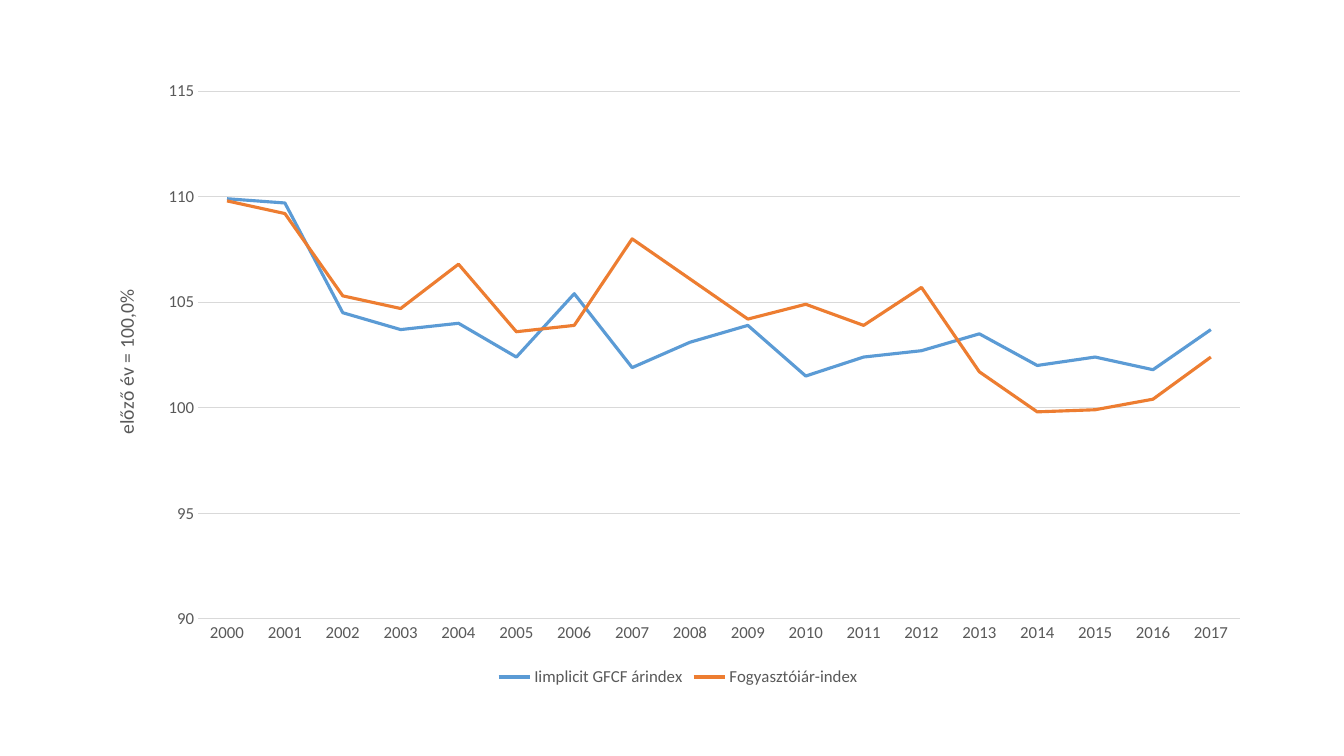
import pptx
import pptx.chart.data
import pptx.dml.color
import pptx.enum.chart
import pptx.oxml
import pptx.util

COLORS = {"text": "595959", "grid": "D9D9D9", "implicit": "5B9BD5", "consumer": "ED7D31"}
WIDTH, HEIGHT = pptx.util.Inches(13.33), pptx.util.Inches(7.5)
CHART_BOX = (0.069, 0.091, 0.871, 0.823)
PLOT_SHARE = {"x": 0.09, "y": 0.036, "w": 0.89, "h": 0.848}

YEARS = [str(year) for year in range(2000, 2018)]
PRICE_INDICES = [
    ("Iimplicit GFCF árindex", "implicit",
     [109.9, 109.7, 104.5, 103.7, 104, 102.4, 105.4, 101.9, 103.1,
      103.9, 101.5, 102.4, 102.7, 103.5, 102, 102.4, 101.8, 103.7]),
    ("Fogyasztóiár-index", "consumer",
     [109.8, 109.2, 105.3, 104.7, 106.8, 103.6, 103.9, 108, 106.1,
      104.2, 104.9, 103.9, 105.7, 101.7, 99.8, 99.9, 100.4, 102.4]),
]


def rgb(name):
    return pptx.dml.color.RGBColor.from_string(COLORS[name])


def format_font(font, size=12, color="text", bold=False):
    font.name = "Calibri"
    font.size = pptx.util.Pt(size)
    font.bold = bold
    font.color.rgb = rgb(color)


def add_text(frame, text, **style):
    run = frame.paragraphs[0].add_run()
    run.text = text
    format_font(run.font, **style)


def format_line(line, color, width):
    line.color.rgb = rgb(color)
    line.width = pptx.util.Pt(width)


def place_plot(chart, share):
    plot_area = chart._chartSpace.chart.plotArea
    for old_layout in plot_area.xpath("c:layout"):
        plot_area.remove(old_layout)
    modes = "".join(f'<c:{axis}Mode val="edge"/>' for axis in "xy")
    sizes = "".join(f'<c:{key} val="{value}"/>' for key, value in share.items())
    plot_area.insert(0, pptx.oxml.parse_xml(
        '<c:layout xmlns:c="http://schemas.openxmlformats.org/drawingml/2006/chart">'
        f'<c:manualLayout><c:layoutTarget val="inner"/>{modes}{sizes}'
        '</c:manualLayout></c:layout>'))


def format_axes(chart):
    years, index = chart.category_axis, chart.value_axis
    for axis in (years, index):
        axis.major_tick_mark = pptx.enum.chart.XL_TICK_MARK.NONE
        axis.minor_tick_mark = pptx.enum.chart.XL_TICK_MARK.NONE
        format_font(axis.tick_labels.font)
    format_line(years.format.line, "grid", 0.75)
    index.format.line.fill.background()
    index.minimum_scale, index.maximum_scale, index.major_unit = 90, 115, 5
    index.tick_labels.number_format = "0"
    index.tick_labels.number_format_is_linked = False
    format_line(index.major_gridlines.format.line, "grid", 0.75)
    add_text(index.axis_title.text_frame, "előző év = 100,0%", size=14)


def add_price_chart(slide, box):
    data = pptx.chart.data.CategoryChartData()
    data.categories = YEARS
    for name, _, values in PRICE_INDICES:
        data.add_series(name, values)
    left, top, width, height = box
    chart = slide.shapes.add_chart(
        pptx.enum.chart.XL_CHART_TYPE.LINE, int(left * WIDTH), int(top * HEIGHT),
        int(width * WIDTH), int(height * HEIGHT), data).chart
    format_font(chart.font)
    chart.has_title = False
    chart.plots[0].vary_by_categories = False
    for series, (_, color, _) in zip(chart.plots[0].series, PRICE_INDICES):
        series.smooth = False
        series.marker.style = pptx.enum.chart.XL_MARKER_STYLE.NONE
        format_line(series.format.line, color, 2.25)
    format_axes(chart)
    chart.has_legend = True
    chart.legend.position = pptx.enum.chart.XL_LEGEND_POSITION.BOTTOM
    chart.legend.include_in_layout = False
    format_font(chart.legend.font)
    place_plot(chart, PLOT_SHARE)


def main():
    deck = pptx.Presentation()
    deck.slide_width, deck.slide_height = WIDTH, HEIGHT
    slide = deck.slides.add_slide(deck.slide_layouts[6])
    add_price_chart(slide, CHART_BOX)
    deck.save("out.pptx")


if __name__ == "__main__":
    main()
